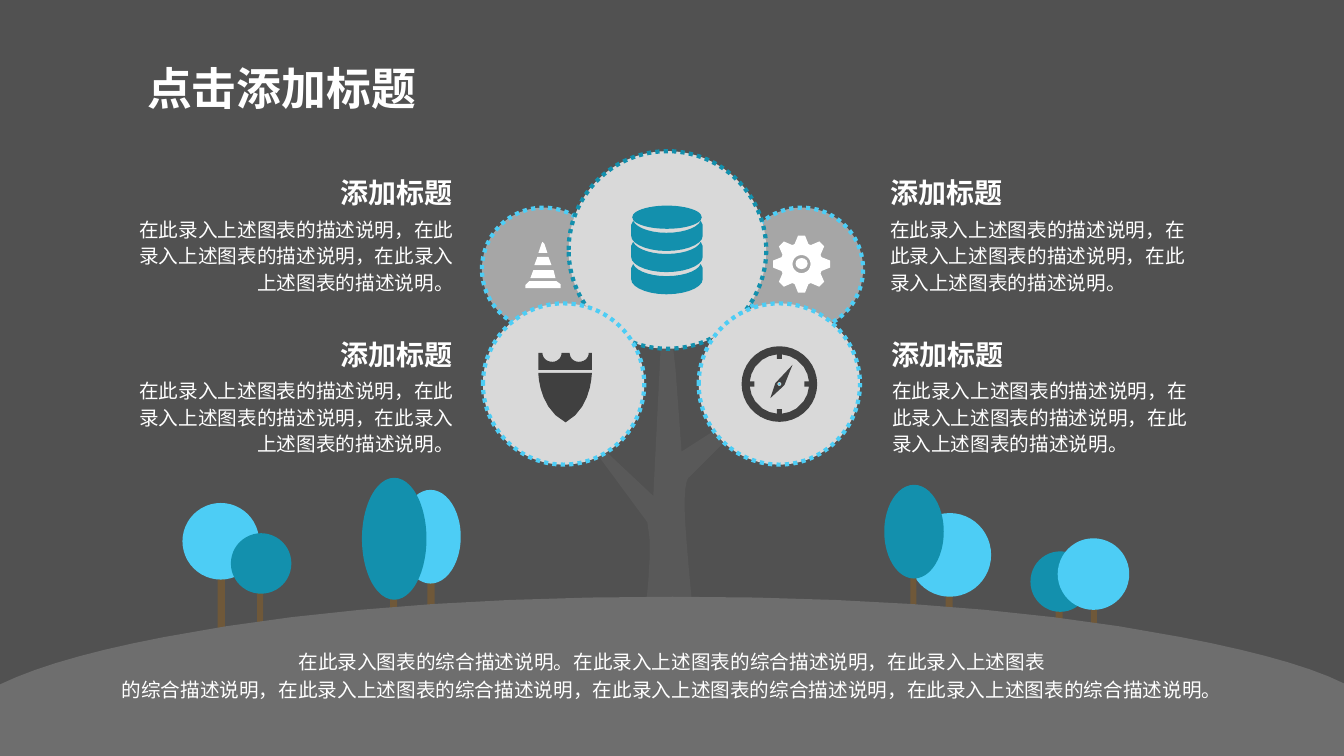
from dataclasses import dataclass
from math import cos, radians, sin

from lxml.etree import SubElement
from pptx import Presentation
from pptx.dml.color import RGBColor as Rgb
from pptx.enum.dml import MSO_LINE as Dash
from pptx.enum.shapes import MSO_SHAPE as Kind
from pptx.enum.text import MSO_AUTO_SIZE as Fit, PP_ALIGN as Align
from pptx.oxml.ns import qn
from pptx.util import Inches, Pt

COLORS = {
    "shade": "262626", "hill": "6E6E6E", "trunk": "595959", "wood": "6F5839",
    "sky": "4DCDF5", "teal": "1390AD", "pale": "D9D9D9", "mid": "A6A6A6",
    "dark": "404040", "white": "FFFFFF",
}
FONT = "Noto Sans CJK SC"
HEAD = "添加标题"
BODY = "在此录入上述图表的描述说明，" * 2 + "在此录入上述图表的描述说明。"
FOOT = [
    "在此录入图表的综合描述说明。在此录入上述图表的综合描述说明，在此录入上述图表",
    "的综合描述说明，" + "在此录入上述图表的综合描述说明，" * 2 + "在此录入上述图表的综合描述说明。",
]


@dataclass
class Part:
    x: float
    y: float
    w: float
    h: float
    color: str
    kind: Kind = Kind.OVAL


@dataclass
class Label:
    x: float
    y: float
    w: float
    h: float
    lines: list[str]
    size: int = 14
    bold: bool = False
    align: Align = Align.LEFT
    space: float = 1.0
    wrap: bool = True
    font: str = FONT
    inset: tuple[float, float] = (0.1, 0.05)


def paint(shape, color: str) -> None:
    shape.shadow.inherit = False
    shape.fill.solid()
    shape.fill.fore_color.rgb = Rgb.from_string(COLORS[color])
    shape.line.fill.background()


def draw(shapes, part: Part):
    shape = shapes.add_shape(
        part.kind, Inches(part.x), Inches(part.y), Inches(part.w), Inches(part.h))
    paint(shape, part.color)
    return shape


def bend(steps: list[tuple]) -> list[tuple]:
    """Turn points (x, y) and Bezier curves (x1, y1, x2, y2, x, y) into points."""
    points = [steps[0]]
    for step in steps[1:]:
        ends = [points[-1], *zip(step[::2], step[1::2])]
        if len(ends) == 2:
            points.append(step)
            continue
        for i in range(1, 8):
            t = i / 7
            terms = ((1 - t) ** 3, 3 * t * (1 - t) ** 2, 3 * t * t * (1 - t), t ** 3)
            points.append(tuple(sum(k * p[a] for k, p in zip(terms, ends)) for a in (0, 1)))
    return points


def trace(shapes, loops: list[list[tuple]], color: str, down: float = 0) -> None:
    """One shape of closed loops; an inner loop cuts a hole."""
    paths = [[(Inches(x), Inches(y + down)) for x, y in bend(loop)] for loop in loops]
    form = shapes.build_freeform(*paths[0][0])
    for i, spots in enumerate(paths):
        if i:
            form.move_to(*spots[0])
        form.add_line_segments(spots[1:], close=True)
    paint(form.convert_to_shape(), color)


def spin(x: float, y: float, count: int, motif: list[tuple]) -> list[tuple]:
    """Repeat a motif of (radius, angle) evenly around a centre."""
    return [
        (x + r * sin(radians(i * 360 / count + a)), y - r * cos(radians(i * 360 / count + a)))
        for i in range(count) for r, a in motif
    ]


def write(shapes, label: Label) -> None:
    box = shapes.add_textbox(
        Inches(label.x), Inches(label.y), Inches(label.w), Inches(label.h))
    frame = box.text_frame
    frame.word_wrap = label.wrap
    frame.auto_size = Fit.NONE if label.wrap else Fit.SHAPE_TO_FIT_TEXT
    frame.margin_left = frame.margin_right = Inches(label.inset[0])
    frame.margin_top = frame.margin_bottom = Inches(label.inset[1])
    frame.text = "\n".join(label.lines)
    for para in frame.paragraphs:
        para.alignment = label.align
        para.line_spacing = label.space
        for run in para.runs:
            font = run.font
            font.name, font.size, font.bold = label.font, Pt(label.size), label.bold
            font.color.rgb = Rgb.from_string(COLORS["white"])
            SubElement(run._r.get_or_add_rPr(), qn("a:ea")).set("typeface", FONT)


def badge(shapes, x: float, y: float, size: float, color: str, rim: str):
    """Dotted round badge; returns the shapes of its group."""
    group = shapes.add_group_shape().shapes
    disc = draw(group, Part(x, y, size, size, color))
    disc.line.color.rgb = Rgb.from_string(COLORS[rim])
    disc.line.width = Pt(3)
    disc.line.dash_style = Dash.ROUND_DOT
    return group


def wood(x: float, y: float, w: float, h: float) -> Part:
    return Part(x, y, w, h, "wood", Kind.RECTANGLE)


TREES = [
    [wood(9.38, 5.3, 0.07, 0.75), Part(9.01, 5.09, 0.82, 0.83, "sky"),
     wood(9.03, 5.3, 0.06, 0.75), Part(8.77, 4.81, 0.59, 0.93, "teal")],
    [wood(3.87, 5.91, 0.07, 0.22), wood(4.24, 5.3, 0.07, 0.75),
     Part(3.97, 4.86, 0.6, 0.93, "sky"), Part(3.59, 4.74, 0.64, 1.21, "teal")],
    [wood(2.16, 5.55, 0.07, 0.75), wood(2.55, 5.74, 0.06, 0.5),
     Part(1.81, 4.99, 0.76, 0.76, "sky"), Part(2.29, 5.29, 0.6, 0.6, "teal")],
    [wood(10.47, 5.58, 0.07, 0.64), Part(10.22, 5.47, 0.59, 0.6, "teal"),
     wood(10.82, 5.79, 0.06, 0.5), Part(10.49, 5.34, 0.71, 0.71, "sky")],
]
TRUNK = [
    (6.36, 6.38), (6.36, 6.38, 6.5, 5.46, 6.42, 5.18), (5.66, 4.15), (6.48, 4.92),
    (6.59, 2.7), (6.7, 3.66), (6.76, 4.48), (7.68, 3.89), (6.84, 4.73),
    (6.84, 4.73, 6.75, 4.73, 6.81, 5.38), (6.86, 6.02, 6.91, 6.37, 6.91, 6.37),
]
HILL = [
    (6.67, 5.92), (8.64, 5.92, 10.32, 6.05, 11.71, 6.32),
    (12.44, 6.46, 12.99, 6.61, 13.33, 6.78), (13.33, 7.5), (0, 7.5), (0, 6.79),
    (0.35, 6.62, 0.89, 6.46, 1.63, 6.32), (3.02, 6.05, 4.7, 5.92, 6.67, 5.92),
]
CONE = [
    [(5.21, 2.86), (5.21, 2.83), (5.25, 2.79), (5.52, 2.79), (5.56, 2.82), (5.56, 2.86)],
    [(5.26, 2.76), (5.29, 2.68), (5.49, 2.68), (5.51, 2.76)],
    [(5.3, 2.63), (5.33, 2.55), (5.44, 2.55), (5.47, 2.63)],
    [(5.34, 2.51), (5.37, 2.42), (5.38, 2.4), (5.4, 2.42), (5.43, 2.51)],
]
LAYER = [
    (6.28, 0), (6.31, 0.07, 6.45, 0.12, 6.61, 0.12), (6.78, 0.12, 6.92, 0.07, 6.95, 0),
    (6.97, 0.04), (6.97, 0.15), (6.97, 0.23, 6.81, 0.3, 6.61, 0.3),
    (6.42, 0.3, 6.26, 0.23, 6.26, 0.15), (6.26, 0.04),
]
GEAR = [
    spin(7.95, 2.62, 8, [(0.21, -19), (0.285, -7), (0.285, 7), (0.21, 19)]),
    spin(7.95, 2.62, 20, [(0.09, 0)]),
]
DIAL = [
    spin(7.73, 3.81, 36, [(0.375, 0)]),
    spin(7.73, 3.81, 4, [(0.295, -5), (0.25, -6), (0.25, 6), (0.295, 5),
                         (0.295, 20), (0.295, 35), (0.295, 55), (0.295, 70)]),
]
NEEDLE = [
    [(7.64, 3.95), (7.69, 3.8), (7.71, 3.78), (7.86, 3.62), (7.78, 3.82), (7.76, 3.84)],
    spin(7.73, 3.81, 12, [(0.02, 0)]),
]
SHIELD = [(5.61, 4.19), (5.87, 4.05, 5.87, 3.7, 5.87, 3.7), (5.34, 3.7),
          (5.34, 3.7, 5.34, 4.05, 5.61, 4.19)]
CROWN = [
    (5.84, 3.5), (5.84, 3.55, 5.8, 3.59, 5.74, 3.59), (5.69, 3.59, 5.65, 3.55, 5.65, 3.5),
    (5.57, 3.5), (5.57, 3.55, 5.53, 3.59, 5.48, 3.59),
    (5.42, 3.59, 5.38, 3.55, 5.38, 3.5), (5.34, 3.5), (5.34, 3.67), (5.87, 3.67), (5.87, 3.5),
]


def main() -> None:
    deck = Presentation()
    deck.slide_width, deck.slide_height = Inches(13.33), Inches(7.5)
    shapes = deck.slides.add_slide(deck.slide_layouts[6]).shapes

    # Translucent backdrop
    back = draw(shapes, Part(0, 0, 13.33, 7.5, "shade", Kind.RECTANGLE))
    tint = back.fill._xPr.find(".//" + qn("a:srgbClr"))
    SubElement(tint, qn("a:alpha")).set("val", "80000")

    # Scenery
    for tree in TREES:
        group = shapes.add_group_shape().shapes
        for part in tree:
            draw(group, part)
    trace(shapes, [TRUNK], "trunk")
    trace(shapes, [HILL], "hill")

    # Texts
    write(shapes, Label(1.13, 6.36, 11.07, 0.64, FOOT, align=Align.CENTER,
                        space=1.2, inset=(0.07, 0.04)))
    for x, y, left, top, wide, tall, align in (
            (8.73, 1.69, 8.73, 2.08, 3.3, 1.1, Align.LEFT),
            (8.74, 3.3, 8.75, 3.68, 3.3, 0.77, Align.LEFT),
            (3.28, 3.3, 1.11, 3.68, 3.49, 0.77, Align.RIGHT),
            (3.28, 1.69, 1.11, 2.08, 3.49, 1.27, Align.RIGHT)):
        write(shapes, Label(left, top, wide, tall, [BODY], align=align, space=1.13))
        write(shapes, Label(x, y, 1.32, 0.44, [HEAD], 20, True, wrap=False))

    # Gear and cone badges
    group = badge(shapes, 7.34, 2.06, 1.22, "mid", "sky")
    trace(group, GEAR, "white")
    draw(group, Part(7.89, 2.56, 0.12, 0.11, "white"))
    group = badge(shapes, 4.78, 2.06, 1.22, "mid", "sky")
    trace(group, CONE, "white")

    # Storage badge
    group = badge(shapes, 5.64, 1.5, 1.96, "pale", "teal")
    for top in (2.4, 2.62, 2.19):
        trace(group, [LAYER], "teal", top)
    draw(group, Part(6.27, 2.04, 0.69, 0.23, "teal"))

    # Compass and shield badges
    group = badge(shapes, 6.93, 3.01, 1.6, "pale", "sky")
    trace(group, DIAL, "dark")
    trace(group, NEEDLE, "dark")
    draw(group, Part(7.72, 3.8, 0.02, 0.02, "sky"))
    group = badge(shapes, 4.79, 3.01, 1.6, "pale", "sky")
    trace(group, [SHIELD], "dark")
    trace(group, [CROWN], "dark")

    # Title
    write(shapes, Label(1.36, 0.55, 2.89, 0.64, ["点击添加标题"], 32, True,
                        wrap=False, font="Arial"))
    deck.save("out.pptx")


if __name__ == "__main__":
    main()
